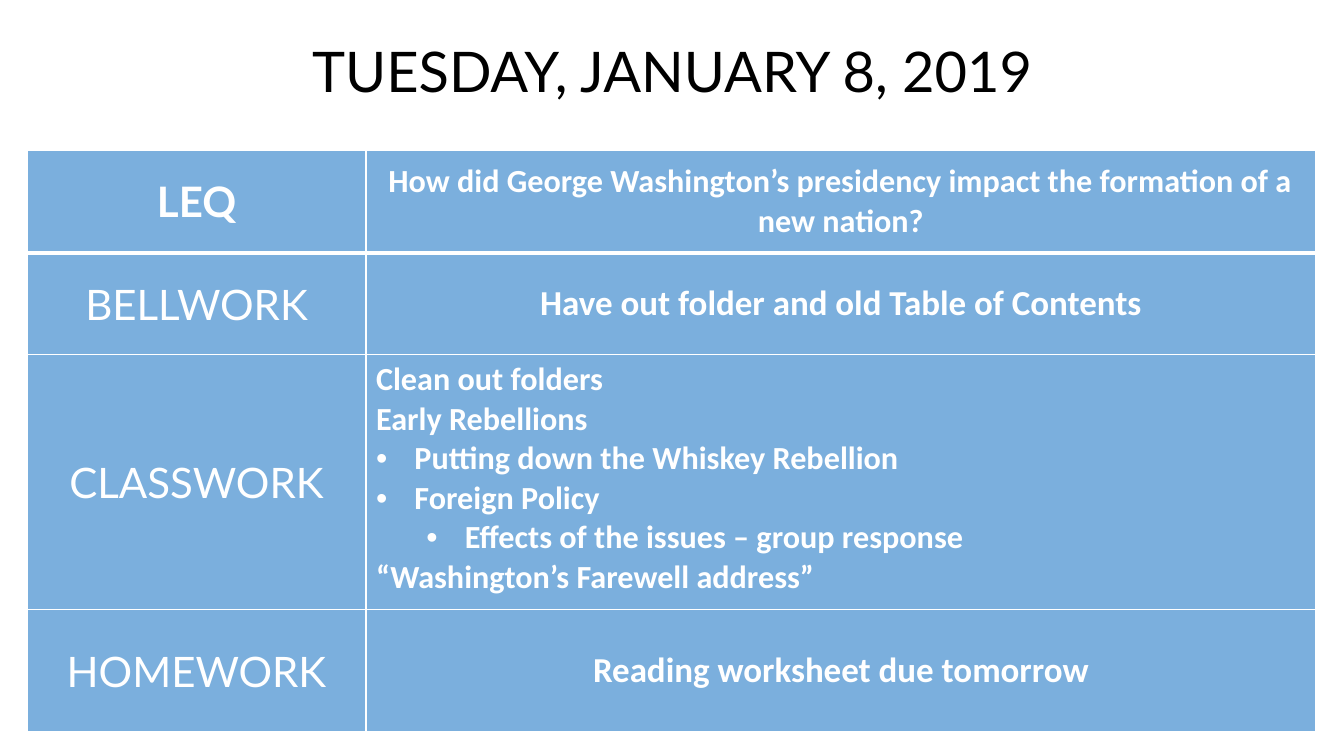
from dataclasses import dataclass

from lxml.etree import SubElement
from pptx import Presentation
from pptx.dml.color import RGBColor
from pptx.enum.text import MSO_ANCHOR as Anchor, PP_ALIGN as Align
from pptx.oxml import parse_xml
from pptx.oxml.ns import nsdecls, qn
from pptx.util import Inches, Pt


@dataclass(frozen=True)
class Theme:
    ink: str = "000000"
    paper: str = "FFFFFF"
    blue: str = "5B9BD5"
    label_font: str = "Lato"
    body_font: str = "Calibri"
    title_size: int = 40
    label_size: int = 30
    task_size: int = 25
    detail_size: int = 23
    thin: int = 1
    thick: int = 3


THEME = Theme()
WIDTH, HEIGHT = 13.33, 7.5
MARGIN = 0.27
COLUMNS = (3.36, 9.42)
ROWS = (1.02, 1.01, 2.53, 1.21)
TABLE_TOP = 1.49
BULLET_HANG = 0.38
LEVEL_STEP = 0.5

AGENDA = (
    ("LEQ", "How did George Washington’s presidency impact the formation of a new nation?",
     THEME.detail_size),
    ("BELLWORK", "Have out folder and old Table of Contents", THEME.task_size),
    ("CLASSWORK", (
        ("Clean out folders", None),
        ("Early Rebellions", None),
        ("Putting down the Whiskey Rebellion", 0),
        ("Foreign Policy", 0),
        ("Effects of the issues – group response", 1),
        ("“Washington’s Farewell address”", None),
    ), THEME.detail_size),
    ("HOMEWORK", "Reading worksheet due tomorrow", THEME.task_size),
)


def fill_with(fill, color, opacity):
    fill.solid()
    fill.fore_color.rgb = RGBColor.from_string(color)
    color_element = fill._xPr.find(qn("a:solidFill"))[0]
    SubElement(color_element, qn("a:alpha"), val=str(opacity * 1000))


def write(paragraph, text, *, font, size, color=THEME.paper, bold=False, align=Align.CENTER):
    paragraph.alignment = align
    run = paragraph.add_run()
    run.text = text
    run.font.name = font
    run.font.size = Pt(size)
    run.font.bold = bold
    run.font.color.rgb = RGBColor.from_string(color)


def add_bullet(paragraph, level):
    paragraph.level = level
    properties = paragraph._p.get_or_add_pPr()
    properties.set("marL", str(Inches(BULLET_HANG + level * LEVEL_STEP)))
    properties.set("indent", str(-Inches(BULLET_HANG)))
    SubElement(properties, qn("a:buFont"), typeface="Arial")
    SubElement(properties, qn("a:buChar"), char="•")


def set_borders(cell, **widths):
    properties = cell._tc.get_or_add_tcPr()
    for position, side in enumerate("LRTB"):
        width = Pt(widths.get(side, THEME.thin))
        properties.insert(position, parse_xml(
            f'<a:ln{side} {nsdecls("a")} w="{width}"><a:solidFill>'
            f'<a:srgbClr val="{THEME.paper}"/></a:solidFill></a:ln{side}>'))


def write_list(frame, items, size):
    for index, (text, level) in enumerate(items):
        paragraph = frame.add_paragraph() if index else frame.paragraphs[0]
        write(paragraph, text, font=THEME.body_font, size=size, bold=True, align=Align.LEFT)
        if level is not None:
            add_bullet(paragraph, level)


def add_title(slide, text):
    title = slide.shapes.title
    title.left, title.top = Inches(MARGIN), Inches(0.2)
    title.width, title.height = Inches(WIDTH - 2 * MARGIN), Inches(1)
    fill_with(title.fill, THEME.paper, 65)
    title.text_frame.vertical_anchor = Anchor.MIDDLE
    write(title.text_frame.paragraphs[0], text, font=THEME.label_font,
          size=THEME.title_size, color=THEME.ink)


def add_agenda(slide):
    table = slide.shapes.add_table(
        len(ROWS), len(COLUMNS), Inches(MARGIN), Inches(TABLE_TOP),
        Inches(sum(COLUMNS)), Inches(sum(ROWS))).table
    table.first_row = table.horz_banding = False
    for column, width in zip(table.columns, COLUMNS):
        column.width = Inches(width)
    for index, (row, height, entry) in enumerate(zip(table.rows, ROWS, AGENDA)):
        row.height = Inches(height)
        label, content, size = entry
        for cell in row.cells:
            cell.vertical_anchor = Anchor.MIDDLE
            fill_with(cell.fill, THEME.blue, 80)
            set_borders(cell, **{0: {"B": THEME.thick}, 1: {"T": THEME.thick}}.get(index, {}))
        label_cell, content_cell = row.cells
        write(label_cell.text_frame.paragraphs[0], label, font=THEME.label_font,
              size=THEME.label_size, bold=index == 0)
        if isinstance(content, str):
            write(content_cell.text_frame.paragraphs[0], content, font=THEME.body_font,
                  size=size, bold=True)
        else:
            content_cell.vertical_anchor = Anchor.TOP
            write_list(content_cell.text_frame, content, size)


def main():
    presentation = Presentation()
    presentation.slide_width = Inches(WIDTH)
    presentation.slide_height = Inches(HEIGHT)
    slide = presentation.slides.add_slide(presentation.slide_layouts[5])
    add_title(slide, "TUESDAY, JANUARY 8, 2019")
    add_agenda(slide)
    presentation.save("out.pptx")


if __name__ == "__main__":
    main()
